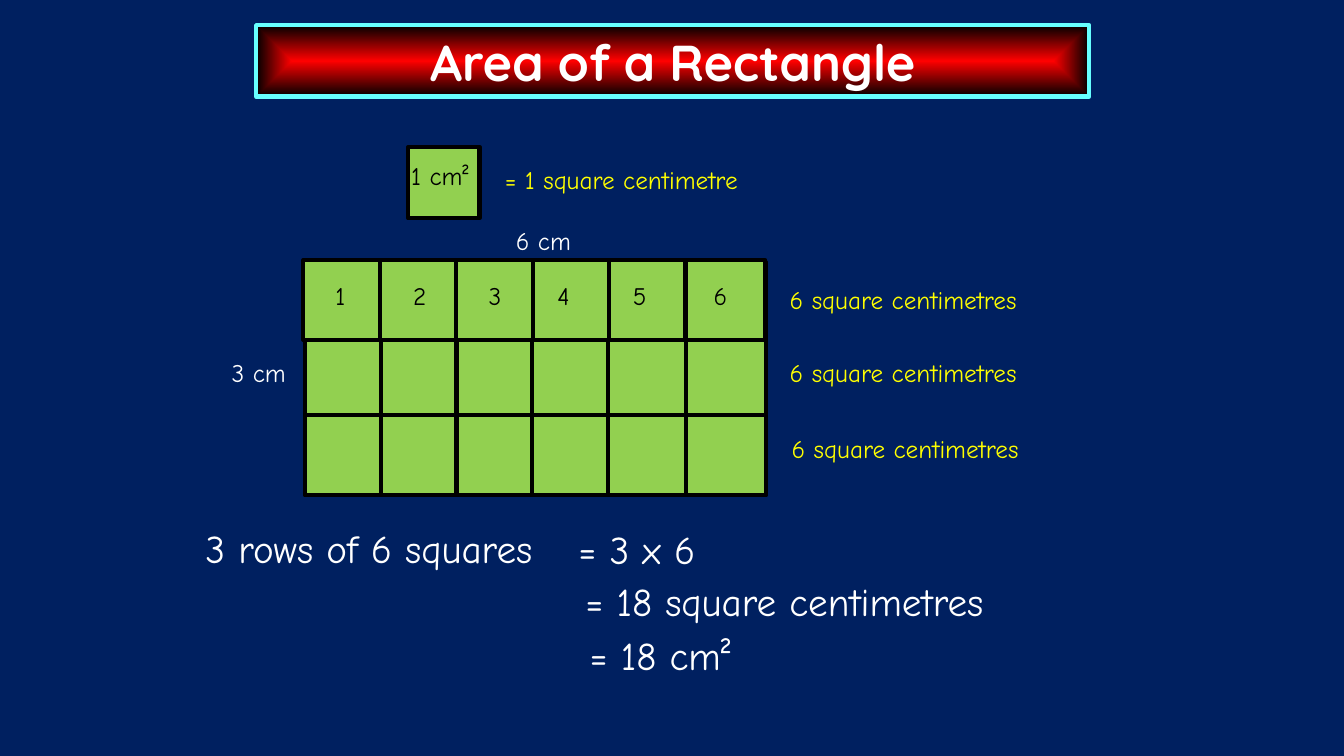
from lxml import etree
from pptx import Presentation
from pptx.dml.color import RGBColor
from pptx.enum.shapes import MSO_SHAPE
from pptx.enum.text import MSO_ANCHOR, PP_ALIGN
from pptx.oxml.ns import qn
from pptx.util import Pt

RECT = MSO_SHAPE.RECTANGLE
CENTER, MIDDLE = PP_ALIGN.CENTER, MSO_ANCHOR.MIDDLE
HEX = {"navy": "002060", "green": "92D050", "black": "000000", "white": "FFFFFF",
       "yellow": "FFFF00", "red": "FF0000", "aqua": "66FFFF"}
COLS = 6
SIDE = 57


def color(name):
    return RGBColor.from_string(HEX[name])


def style(run, font, size, hue):
    run.font.name, run.font.size = font, Pt(size)
    run.font.color.rgb = color(hue)


def square(slide, x, y, w, h):
    shape = slide.shapes.add_shape(RECT, Pt(x), Pt(y), Pt(w), Pt(h))
    shape.shadow.inherit = False
    shape.fill.solid()
    shape.fill.fore_color.rgb = color("green")
    shape.line.color.rgb = color("black")
    shape.line.width = Pt(3)


def label(slide, text, x, y, w, hue="white", size=18):
    box = slide.shapes.add_textbox(Pt(x), Pt(y), Pt(w), Pt(size * 1.6))
    box.text_frame.word_wrap = True
    run = box.text_frame.paragraphs[0].add_run()
    run.text = text
    style(run, "Comic Neue", size, hue)
    return box


# Title bar with a gradient that runs in from the edges
def banner(slide, x, y, w, h):
    title = slide.shapes.title
    title.left, title.top, title.width, title.height = Pt(x), Pt(y), Pt(w), Pt(h)
    title.fill.gradient()
    for stop, hue in zip(title.fill.gradient_stops, ("red", "black")):
        stop.color.rgb = color(hue)
    grad = title.element.spPr.find(qn("a:gradFill"))
    grad.remove(grad.find(qn("a:lin")))
    route = etree.SubElement(grad, qn("a:path"), {"path": "shape"})
    etree.SubElement(route, qn("a:fillToRect"), dict.fromkeys("ltrb", "50000"))
    title.line.color.rgb = color("aqua")
    title.line.width = Pt(3)
    frame = title.text_frame
    frame.vertical_anchor = MIDDLE
    frame.paragraphs[0].alignment = CENTER
    run = frame.paragraphs[0].add_run()
    run.text = "Area of a Rectangle"
    style(run, "Quicksand", 36, "white")
    run.font.bold = True


# Unit square and its meaning
def unit(slide, x, y, side):
    square(slide, x, y, side, side)
    label(slide, "1 cm²", x - 5, y + 6, 86, "black")
    label(slide, "= 1 square centimetre", x + 62, y + 8.6, 256, "yellow")


# Three rows of six squares with side lengths and row totals
def grid(slide, x, y, w, h):
    square(slide, x, y, w, h)
    step = (h - SIDE) / 2
    for row in (1, 2):
        for col in range(COLS):
            left = x + 54 * col if col < COLS - 1 else x + w - SIDE
            square(slide, left, y + step * row, SIDE, SIDE)

    # The numbered row sits slightly up and left of the others
    for col in range(COLS):
        square(slide, x - 1.3, y - 1.4, SIDE, SIDE) if col == 0 else square(
            slide, x - 1.3 + 54.6 * col, y - 1.4, SIDE, SIDE)
    for num, dx in enumerate((14.4, 70, 124, 173, 227, 284.6), 1):
        label(slide, str(num), x + dx, y + 9.4, 27, "black")

    label(slide, "6 cm", x + 143.4, y - 29.5, 60)
    label(slide, "3 cm", x - 59.6, y + 64.8, 60)
    for dx, dy in ((0, 12.2), (0, 64.8), (1.4, 118.8)):
        label(slide, "6 square centimetres", x + w + 10 + dx, y + dy, 195, "yellow")


# Working that leads to the area
def sums(slide, x, y):
    lines = (("3 rows of 6 squares", 0, 0, 282), ("= 3 x 6", 266.4, 1, 119),
             ("= 18 square centimetres", 271.4, 38, 346), ("= 18 cm²", 274.4, 76.5, 144))
    for text, dx, dy, w in lines:
        label(slide, text, x + dx, y + dy, w, size=28)


def main():
    deck = Presentation()
    deck.slide_width, deck.slide_height = Pt(960), Pt(540)
    slide = deck.slides.add_slide(deck.slide_layouts[5])
    slide.background.fill.solid()
    slide.background.fill.fore_color.rgb = color("navy")
    banner(slide, 183, 18, 595, 51)
    unit(slide, 291.6, 105, 51)
    grid(slide, 218, 187.2, 329, 166.4)
    sums(slide, 139.7, 370.8)
    deck.save("out.pptx")


if __name__ == "__main__":
    main()
